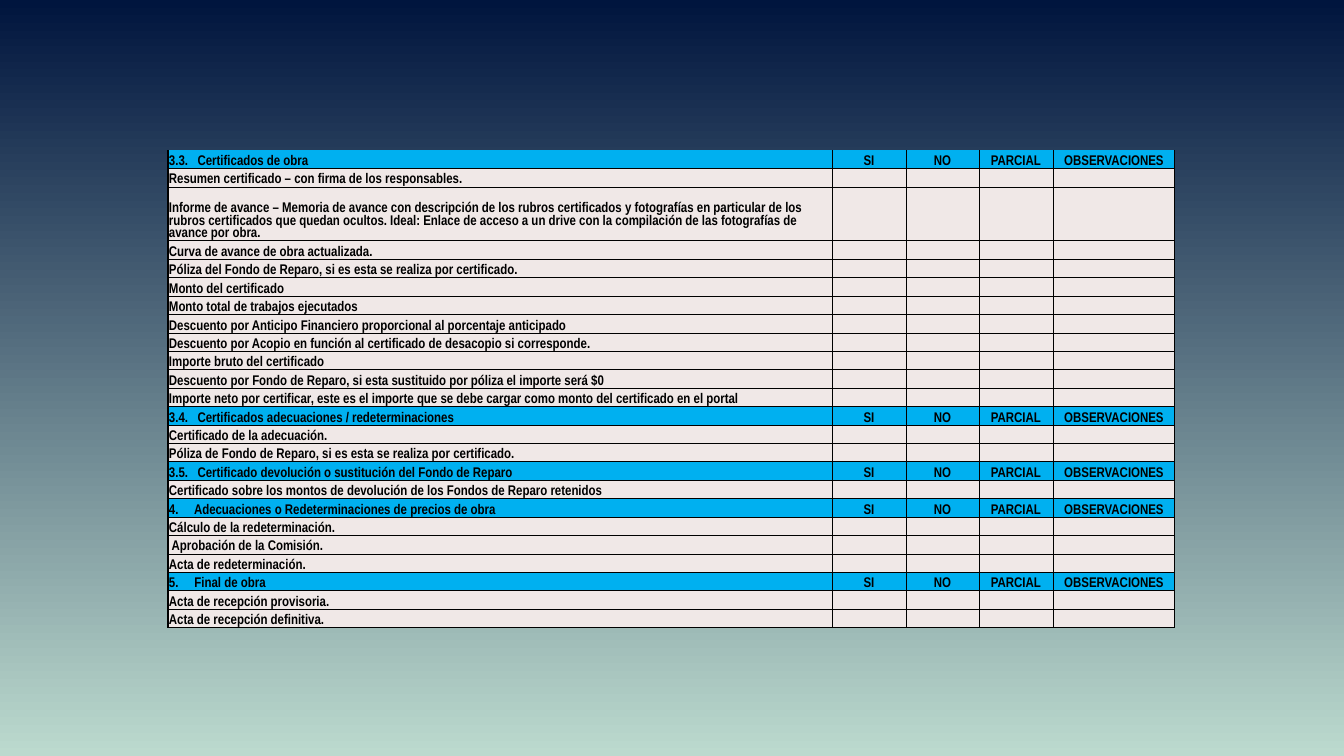
import pptx
import pptx.util
import pptx.dml.color
import pptx.enum.text
import pptx.oxml
import pptx.oxml.ns
import lxml.etree

NAVY = pptx.dml.color.RGBColor(0x00, 0x15, 0x3E)
MINT = pptx.dml.color.RGBColor(0xBC, 0xDA, 0xCE)
SKY = pptx.dml.color.RGBColor(0x00, 0xB0, 0xF0)
BLUSH = pptx.dml.color.RGBColor(0xF0, 0xE8, 0xE7)
BLACK = pptx.dml.color.RGBColor(0x00, 0x00, 0x00)

EMU_PER_PX = 914400 / 100.8
PLAIN_TABLE_STYLE = "{2D5ABB26-0587-4C30-8999-92F81FD0307C}"
THIN, THICK = 0.5, 1

ANSWERS = ["SI", "NO", "PARCIAL", "OBSERVACIONES"]
COLUMN_WIDTHS = [664, 74, 73, 74, 122]
TABLE_LEFT, TABLE_TOP, TABLE_HEIGHT = 168, 150, 478
TALL_ROW, TALL_ROW_HEIGHT = 2, 54

SECTIONS = [
    ("3.3.   Certificados de obra", [
        "Resumen certificado – con firma de los responsables.",
        "Informe de avance – Memoria de avance con descripción de los rubros certificados y "
        "fotografías en particular de los rubros certificados que quedan ocultos. Ideal: Enlace "
        "de acceso a un drive con la compilación de las fotografías de avance por obra.",
        "Curva de avance de obra actualizada.",
        "Póliza del Fondo de Reparo, si es esta se realiza por certificado.",
        "Monto del certificado",
        "Monto total de trabajos ejecutados",
        "Descuento por Anticipo Financiero proporcional al porcentaje anticipado",
        "Descuento por Acopio en función al certificado de desacopio si corresponde.",
        "Importe bruto del certificado",
        "Descuento por Fondo de Reparo, si esta sustituido por póliza el importe será $0",
        "Importe neto por certificar, este es el importe que se debe cargar como monto del "
        "certificado en el portal",
    ]),
    ("3.4.   Certificados adecuaciones / redeterminaciones", [
        "Certificado de la adecuación.",
        "Póliza de Fondo de Reparo, si es esta se realiza por certificado.",
    ]),
    ("3.5.   Certificado devolución o sustitución del Fondo de Reparo", [
        "Certificado sobre los montos de devolución de los Fondos de Reparo retenidos",
    ]),
    ("4.     Adecuaciones o Redeterminaciones de precios de obra", [
        "Cálculo de la redeterminación.",
        " Aprobación de la Comisión.",
        "Acta de redeterminación.",
    ]),
    ("5.     Final de obra", [
        "Acta de recepción provisoria.",
        "Acta de recepción definitiva.",
    ]),
]


def px(length):
    return pptx.util.Emu(round(length * EMU_PER_PX))


class SlideBuilder:
    font_format = {"name": "Arial Narrow", "size": pptx.util.Pt(10), "bold": True}
    cell_format = {
        "margin_left": px(1),
        "margin_right": px(1),
        "margin_top": px(1),
        "margin_bottom": px(0),
        "vertical_anchor": pptx.enum.text.MSO_ANCHOR.BOTTOM,
    }

    def __init__(self, presentation):
        self.slide = presentation.slides.add_slide(presentation.slide_layouts[6])

    def apply(self, target, values):
        for name, value in values.items():
            setattr(target, name, value)

    def background(self, top_color, bottom_color):
        fill = self.slide.background.fill
        fill.gradient()
        fill.gradient_angle = 270
        for stop, color, position in zip(fill.gradient_stops, (top_color, bottom_color), (0, 1)):
            stop.color.rgb = color
            stop.position = position

    def table(self, left, top, widths, heights):
        frame = self.slide.shapes.add_table(
            len(heights), len(widths), px(left), px(top), px(sum(widths)), px(sum(heights)))
        table = frame.table
        self.apply(table, {"first_row": False, "horz_banding": False})
        next(frame.element.iter(pptx.oxml.ns.qn("a:tableStyleId"))).text = PLAIN_TABLE_STYLE
        for column, width in zip(table.columns, widths):
            column.width = px(width)
        for row, height in zip(table.rows, heights):
            row.height = px(height)
        return frame

    def borders(self, properties, widths):
        for side, width in widths.items():
            properties.append(pptx.oxml.parse_xml(
                f'<a:ln{side} {pptx.oxml.ns.nsdecls("a")} w="{pptx.util.Pt(width)}">'
                f'<a:solidFill><a:srgbClr val="{BLACK}"/></a:solidFill></a:ln{side}>'))

    def cell(self, cell, element, text, color, alignment, border_widths):
        self.apply(cell, self.cell_format)
        self.borders(element.find(pptx.oxml.ns.qn("a:tcPr")), border_widths)
        cell.fill.solid()
        cell.fill.fore_color.rgb = color
        paragraph = cell.text_frame.paragraphs[0]
        paragraph.alignment = alignment
        if text:
            run = paragraph.add_run()
            run.text = text
            self.apply(run.font, self.font_format)
            run.font.color.rgb = BLACK
        else:
            lxml.etree.SubElement(
                next(element.iter(pptx.oxml.ns.qn("a:p"))),
                pptx.oxml.ns.qn("a:endParaRPr"), sz="1000")

    def checklist(self, sections):
        rows = []
        for heading, items in sections:
            rows.append(([heading] + ANSWERS, SKY))
            rows += [([item] + [""] * len(ANSWERS), BLUSH) for item in items]
        row_height = (TABLE_HEIGHT - TALL_ROW_HEIGHT) / (len(rows) - 1)
        heights = [row_height] * len(rows)
        heights[TALL_ROW] = TALL_ROW_HEIGHT
        frame = self.table(TABLE_LEFT, TABLE_TOP, COLUMN_WIDTHS, heights)
        elements = frame.element.iter(pptx.oxml.ns.qn("a:tc"))
        last_row, last_column = len(rows) - 1, len(COLUMN_WIDTHS) - 1
        for row_index, (texts, color) in enumerate(rows):
            for column_index, text in enumerate(texts):
                border_widths = {
                    "L": THICK if column_index == 0 else THIN,
                    "R": THICK if column_index == last_column else THIN,
                    "T": THIN,
                    "B": THICK if row_index == last_row else THIN,
                }
                if row_index == 0:
                    del border_widths["T"]
                alignment = (pptx.enum.text.PP_ALIGN.CENTER if column_index
                             else pptx.enum.text.PP_ALIGN.LEFT)
                self.cell(frame.table.cell(row_index, column_index), next(elements),
                          text, color, alignment, border_widths)


def main():
    presentation = pptx.Presentation()
    presentation.slide_width = px(1344)
    presentation.slide_height = px(756)
    builder = SlideBuilder(presentation)
    builder.background(NAVY, MINT)
    builder.checklist(SECTIONS)
    presentation.save("out.pptx")


if __name__ == "__main__":
    main()
